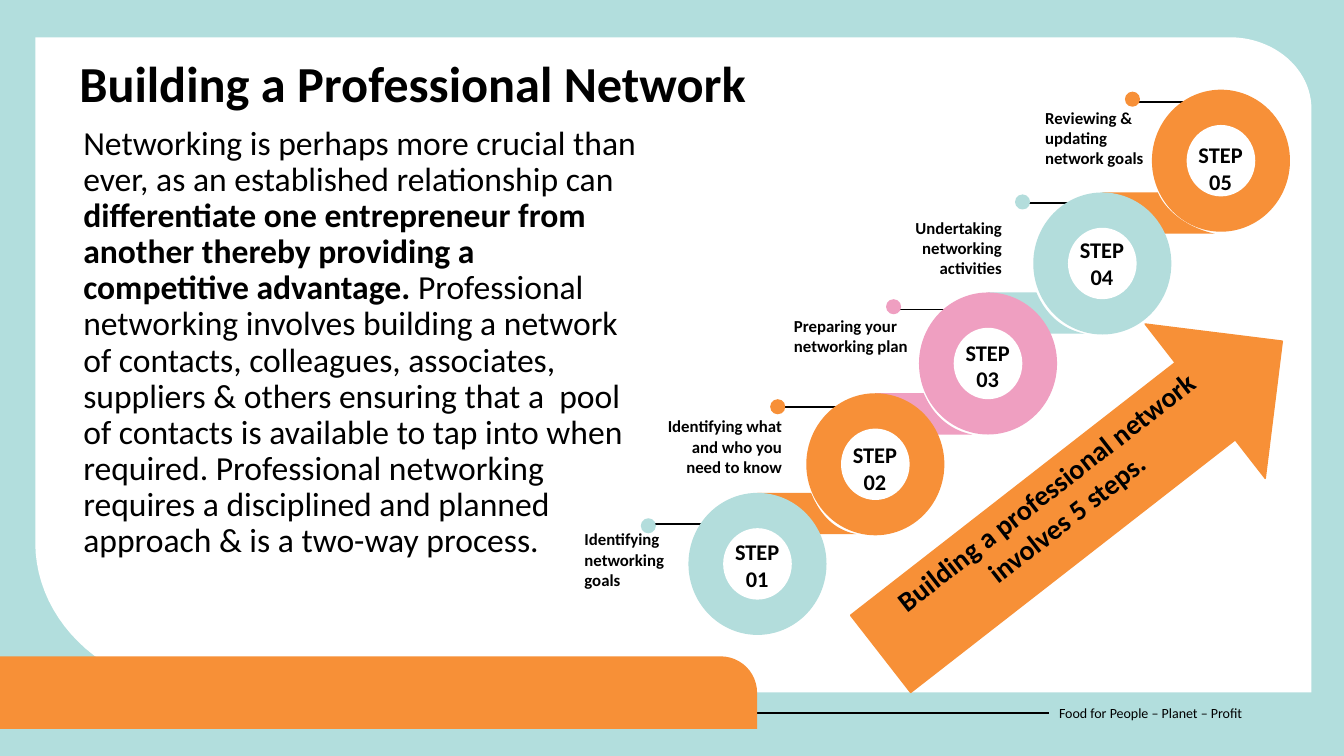
from dataclasses import dataclass
from typing import Optional

from lxml.etree import SubElement
from pptx import Presentation
from pptx.dml.color import RGBColor
from pptx.enum.shapes import MSO_CONNECTOR, MSO_SHAPE
from pptx.enum.text import MSO_ANCHOR, MSO_AUTO_SIZE, PP_ALIGN as Align
from pptx.oxml.ns import qn
from pptx.util import Cm, Pt

FONT = "Calibri"
BLACK = RGBColor(0x00, 0x00, 0x00)
WHITE = RGBColor(0xFF, 0xFF, 0xFF)
PALE_TEAL = RGBColor(0xB2, 0xDE, 0xDD)
TEAL = RGBColor(0xB3, 0xDD, 0xDC)
ORANGE = RGBColor(0xF7, 0x90, 0x37)
STEP_ORANGE = RGBColor(0xF7, 0x90, 0x38)
PINK = RGBColor(0xEF, 0x9F, 0xC1)

# Lengths are in centimetres
SLIDE_WIDTH, SLIDE_HEIGHT = 33.87, 19.05
RING_WIDTH, RING_HEIGHT = 3.48, 3.58
HOLE_WIDTH, HOLE_HEIGHT = 1.73, 1.8
DOT_SIZE = 0.38
LEADER_LENGTH = 3.12
TAB_HEIGHT = 1.04

Point = tuple[float, float]
Box = tuple[float, float, float, float]


@dataclass
class Step:
    number: str
    label: str
    color: RGBColor
    ring: Point
    number_top: float
    dot: Point
    leader: Point
    label_box: Box
    align: Align = Align.LEFT
    tab_runs: Optional[Point] = None  # lengths of the tab's top and bottom edges


STEPS = [
    Step("01", "Identifying networking goals", TEAL, (17.35, 12.42), 13.44,
         (16.15, 13.06), (16.18, 13.21), (14.48, 13.21, 3.07, 1.8)),
    Step("02", "Identifying what and who you need to know", STEP_ORANGE, (20.32, 9.91), 11.0,
         (19.41, 10.06), (19.58, 10.26), (16.48, 10.36, 3.48, 1.8), Align.RIGHT, (1.35, 2.49)),
    Step("03", "Preparing your networking plan", PINK, (23.16, 7.37), 8.41,
         (22.33, 7.54), (22.61, 7.8), (19.76, 7.82, 4.75, 1.27), Align.LEFT, (1.22, 2.44)),
    Step("04", "Undertaking networking activities", TEAL, (26.04, 4.85), 5.82,
         (25.58, 4.9), (25.76, 5.11), (22.2, 5.36, 3.3, 1.8), Align.RIGHT, (1.22, 2.44)),
    Step("05", "Reviewing & updating network goals", STEP_ORANGE, (29.03, 2.26), 3.43,
         (28.35, 2.31), (28.58, 2.57), (26.09, 2.59, 3.02, 1.8), Align.LEFT, (1.4, 2.84)),
]


def paint(shape, color: RGBColor):
    shape.shadow.inherit = False
    shape.fill.solid()
    shape.fill.fore_color.rgb = color
    shape.line.fill.background()
    return shape


def add_preset(slide, kind: MSO_SHAPE, box: Box, color: RGBColor):
    return paint(slide.shapes.add_shape(kind, *map(Cm, box)), color)


def add_outline(slide, points: list[Point], color: RGBColor):
    start, *rest = [(Cm(x), Cm(y)) for x, y in points]
    builder = slide.shapes.build_freeform(*start, scale=1.0)
    builder.add_line_segments(rest, close=True)
    return paint(builder.convert_to_shape(), color)


def curve(start: Point, control_1: Point, control_2: Point, end: Point) -> list[Point]:
    """Points along a cubic Bezier curve."""
    points = []
    for index in range(25):
        t = index / 24
        weights = ((1 - t) ** 3, 3 * t * (1 - t) ** 2, 3 * t ** 2 * (1 - t), t ** 3)
        corners = (start, control_1, control_2, end)
        points.append((sum(w * c[0] for w, c in zip(weights, corners)),
                       sum(w * c[1] for w, c in zip(weights, corners))))
    return points


def add_line(slide, start: Point, end: Point, width: float):
    connector = slide.shapes.add_connector(
        MSO_CONNECTOR.STRAIGHT, *map(Cm, (*start, *end)))
    connector.line.color.rgb = BLACK
    connector.line.width = Pt(width)
    SubElement(connector._element.spPr, qn("a:effectLst"))
    return connector


def write(shape, *runs: tuple[str, bool], size: float, align: Align = Align.LEFT,
          anchor: MSO_ANCHOR = MSO_ANCHOR.TOP, line_spacing=None, grow: bool = False) -> None:
    frame = shape.text_frame
    frame.word_wrap = True
    frame.vertical_anchor = anchor
    if grow:
        frame.auto_size = MSO_AUTO_SIZE.SHAPE_TO_FIT_TEXT
    paragraph = frame.paragraphs[0]
    paragraph.alignment = align
    if line_spacing:
        paragraph.line_spacing = line_spacing
        paragraph.space_before = Pt(10)
    for text, bold in runs:
        run = paragraph.add_run()
        run.text = text
        run.font.name = FONT
        run.font.size = Pt(size)
        run.font.bold = bold
        run.font.color.rgb = BLACK


def add_text(slide, box: Box, *runs: tuple[str, bool], **text_format):
    shape = slide.shapes.add_textbox(*map(Cm, box))
    write(shape, *runs, **text_format)
    return shape


def add_background(slide) -> None:
    add_preset(slide, MSO_SHAPE.RECTANGLE, (0, 0, SLIDE_WIDTH, SLIDE_HEIGHT), PALE_TEAL)
    left, top, right, bottom = 0.89, 0.94, 33.05, 17.45
    top_right = curve((30.99, top), (32.13, top), (right, 1.75), (right, 2.74))
    bottom_left = curve((5.21, bottom), (2.82, bottom), (left, 15.75), (left, 13.67))
    add_outline(slide, [(left, top), *top_right, (right, bottom), *bottom_left], WHITE)
    footer = add_text(slide, (26.44, 17.45, 6.93, 1.02),
                      ("Food for People – Planet – Profit", False),
                      size=10, anchor=MSO_ANCHOR.MIDDLE)
    add_line(slide, (0, 17.96), (26.44, 17.96), 1.5).end_connect(footer, 1)
    bar = add_preset(slide, MSO_SHAPE.ROUND_1_RECTANGLE, (0, 16.54, 19.08, 1.83), ORANGE)
    bar.adjustments[0] = 0.5


def add_callout(slide, step: Step) -> None:
    x, y = step.leader
    add_line(slide, (x, y), (x + LEADER_LENGTH, y), 1.09)
    add_preset(slide, MSO_SHAPE.OVAL, (*step.dot, DOT_SIZE, DOT_SIZE), step.color)
    add_text(slide, step.label_box, (step.label, True), size=12, align=step.align, grow=True)


def add_ring(slide, step: Step, lower: Optional[Step]) -> None:
    add_preset(slide, MSO_SHAPE.OVAL, (*step.ring, RING_WIDTH, RING_HEIGHT), step.color)
    if lower and step.tab_runs:
        # Tab from the middle of the ring below to this ring's edge
        left, top = lower.ring[0] + RING_WIDTH / 2, lower.ring[1]
        upper_end, lower_end = (left + run for run in step.tab_runs)
        bottom = top + TAB_HEIGHT
        edge = curve((lower_end, bottom), (lower_end - 0.6, bottom - 0.12),
                     (upper_end + 0.22, top + 0.52), (upper_end, top))
        add_outline(slide, [(left, top), (left, bottom), *edge], step.color)


def add_ring_number(slide, step: Step) -> None:
    left, top = step.ring
    hole = (left + (RING_WIDTH - HOLE_WIDTH) / 2, top + (RING_HEIGHT - HOLE_HEIGHT) / 2,
            HOLE_WIDTH, HOLE_HEIGHT)
    add_preset(slide, MSO_SHAPE.OVAL, hole, WHITE)
    add_text(slide, (left + 0.89, step.number_top, 1.68, 1.63), (f"STEP {step.number}", True),
             size=16, align=Align.CENTER, grow=True)


def add_arrow(slide) -> None:
    arrow = add_preset(slide, MSO_SHAPE.DOWN_ARROW, (24.79, 6.12, 4.93, 12.83), ORANGE)
    arrow.rotation = 232.1
    arrow.line.color.rgb = ORANGE
    arrow.line.width = Pt(1)
    write(arrow, ("Building a professional network involves 5 steps.", True),
          size=20, align=Align.CENTER)
    arrow.text_frame._txBody.bodyPr.set("vert", "vert")


def main() -> None:
    presentation = Presentation()
    presentation.slide_width, presentation.slide_height = Cm(SLIDE_WIDTH), Cm(SLIDE_HEIGHT)
    slide = presentation.slides.add_slide(presentation.slide_layouts[6])
    add_background(slide)

    # Staircase of steps, from the top down
    for step in reversed(STEPS):
        add_callout(slide, step)
    for step, lower in zip(reversed(STEPS), [*reversed(STEPS[:-1]), None]):
        add_ring(slide, step, lower)
    for step in STEPS:
        add_ring_number(slide, step)

    # Title and body
    add_text(slide, (1.75, 1.37, 29.44, 2.24), ("Building a Professional Network", True),
             size=36, line_spacing=0.9)
    add_text(slide, (1.85, 3.05, 14.61, 8.79),
             ("Networking is perhaps more crucial than ever, as an established relationship can ",
              False),
             ("differentiate one entrepreneur from another thereby providing a competitive "
              "advantage. ", True),
             ("Professional networking involves building a network of contacts, colleagues, "
              "associates, suppliers & others ensuring that a  pool of contacts is available to "
              "tap into when required. Professional networking requires a disciplined and "
              "planned approach & is a two-way process.", False),
             size=24, line_spacing=Pt(25.8))
    add_arrow(slide)
    presentation.save("out.pptx")


if __name__ == "__main__":
    main()
